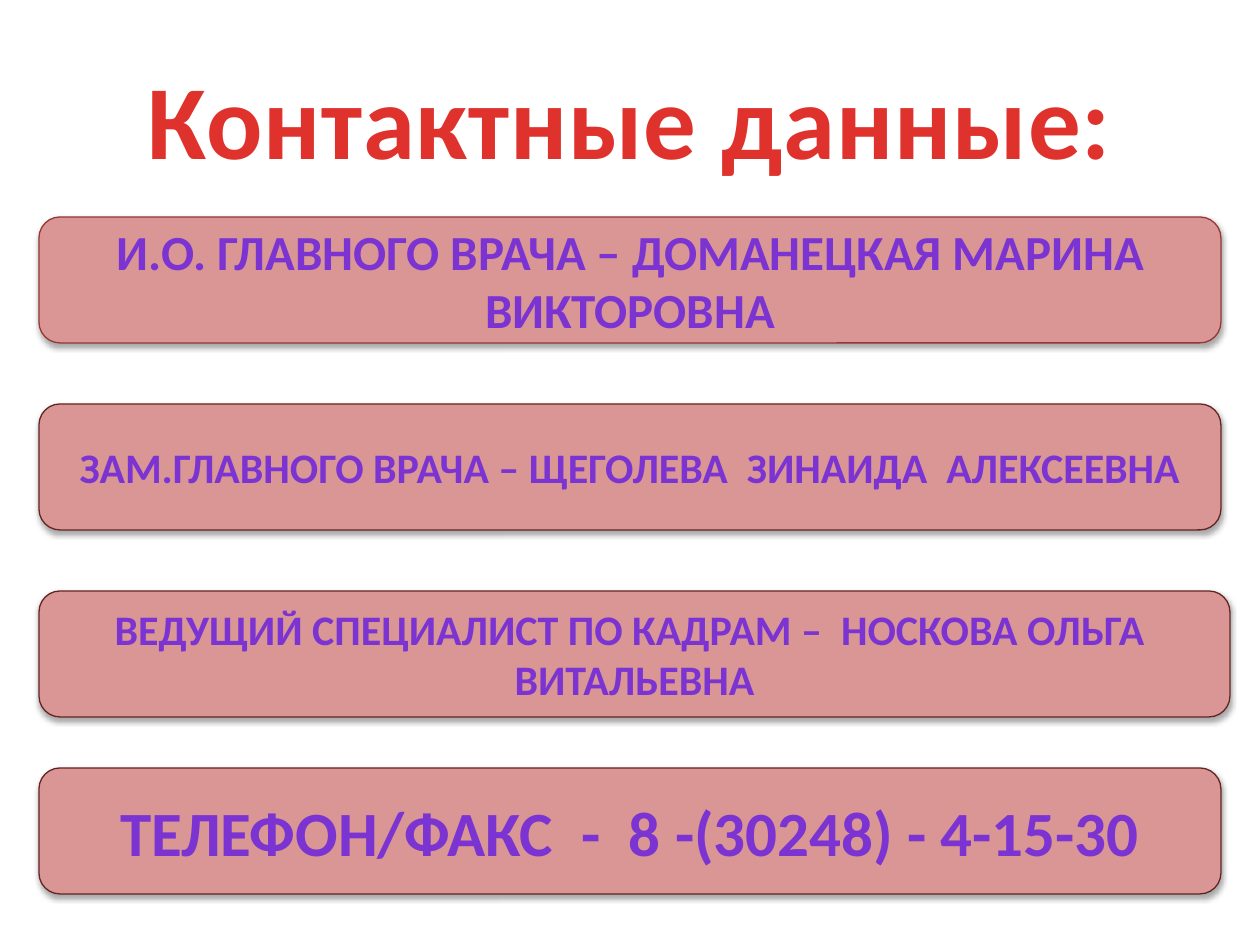
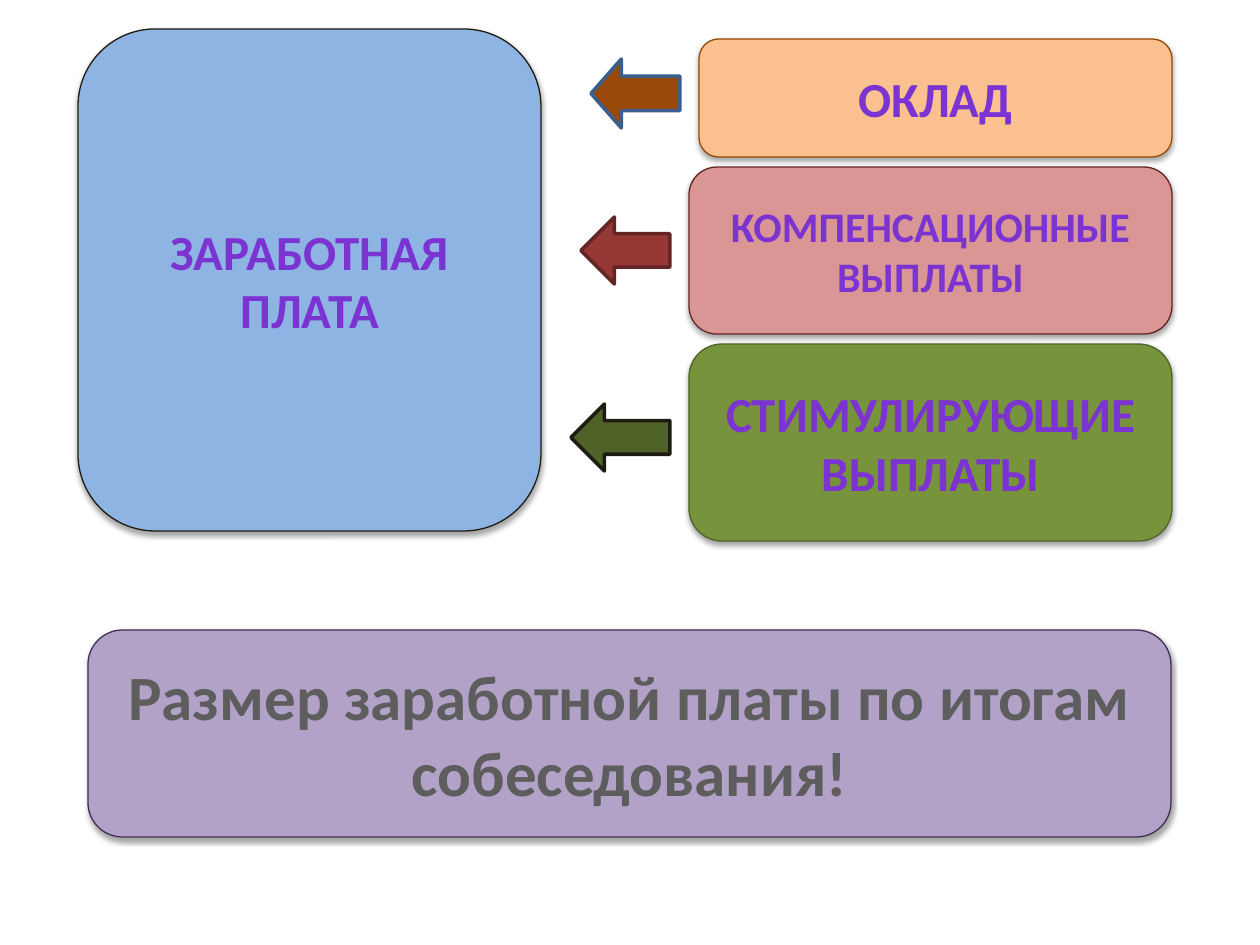
from lxml.etree import SubElement
from pptx import Presentation
from pptx.dml.color import RGBColor
from pptx.enum.shapes import MSO_SHAPE
from pptx.enum.text import MSO_ANCHOR, PP_ALIGN
from pptx.oxml.ns import qn
from pptx.util import Pt

# Scale and style
SCALE = 914400 / 126
FONT = "Calibri"
RED = RGBColor(0xE0, 0x32, 0x2D)
VIOLET = RGBColor(0x7B, 0x34, 0xD2)
GREY = RGBColor(0x5D, 0x5D, 0x5D)
ROSE = RGBColor(0xD9, 0x96, 0x94)
BRICK = RGBColor(0x95, 0x37, 0x35)
MAROON = RGBColor(0x63, 0x25, 0x23)
SKY = RGBColor(0x8E, 0xB4, 0xE3)
BLUE = RGBColor(0x3A, 0x5F, 0x8C)
PEACH = RGBColor(0xFA, 0xC0, 0x90)
BROWN = RGBColor(0x98, 0x48, 0x07)
GREEN = RGBColor(0x77, 0x93, 0x3C)
MOSS = RGBColor(0x4F, 0x62, 0x28)
LILAC = RGBColor(0xB3, 0xA2, 0xC7)
PLUM = RGBColor(0x40, 0x31, 0x52)
INK = RGBColor(0x1E, 0x1C, 0x11)


def px(size):
    return round(size * SCALE)


def write(shape, text, size=28, color=VIOLET, space=0):
    """Put bold centred text into a shape; space is in hundredths of a point."""
    frame = shape.text_frame
    frame.word_wrap = True
    frame.vertical_anchor = MSO_ANCHOR.MIDDLE
    para = frame.paragraphs[0]
    para.alignment = PP_ALIGN.CENTER
    run = para.add_run()
    run.text = text
    font = run.font
    font.name, font.size, font.bold = FONT, Pt(size), True
    font.color.rgb = color
    if space:
        font._element.set("spc", str(space))


class Deck:
    def __init__(self):
        self.prs = Presentation()
        self.prs.slide_width, self.prs.slide_height = px(1260), px(945)
        self.slide = None

    def page(self):
        self.slide = self.prs.slides.add_slide(self.prs.slide_layouts[6])

    def title(self, text):
        box = self.slide.shapes.add_textbox(*map(px, (63, 38, 1134, 158)))
        write(box, text, size=60, color=RED, space=50)

    def shape(self, kind, place, fill, line, width):
        shape = self.slide.shapes.add_shape(kind, *map(px, place))
        shape.shadow.inherit = False
        shape.fill.solid()
        shape.fill.fore_color.rgb = fill
        shape.line.color.rgb = line
        shape.line.width = Pt(width)
        return shape

    def card(self, text, place, fill, line, **style):
        card = self.shape(MSO_SHAPE.ROUNDED_RECTANGLE, place, fill, line, 0.75)
        write(card, text, **style)
        # Soft shadow below the card
        effect = card._element.spPr.find(qn("a:effectLst"))
        shade = SubElement(effect, qn("a:outerShdw"), blurRad="40000",
                           dist="23000", dir="5400000", rotWithShape="0")
        black = SubElement(shade, qn("a:srgbClr"), val="000000")
        SubElement(black, qn("a:alpha"), val="35000")

    def arrow(self, place, fill, line, head=0.5):
        arrow = self.shape(MSO_SHAPE.LEFT_ARROW, place, fill, line, 2)
        arrow.adjustments[1] = head


def contacts(deck):
    deck.page()
    deck.title("Контактные данные:")
    rows = [
        ("И.О. ГЛАВНОГО ВРАЧА – ДОМАНЕЦКАЯ МАРИНА ВИКТОРОВНА",
         217, 1182, BRICK, 28),
        ("ЗАМ.ГЛАВНОГО ВРАЧА – ЩЕГОЛЕВА  ЗИНАИДА  АЛЕКСЕЕВНА",
         404, 1182, MAROON, 24),
        ("ВЕДУЩИЙ СПЕЦИАЛИСТ ПО КАДРАМ –  НОСКОВА ОЛЬГА  ВИТАЛЬЕВНА",
         591, 1191, MAROON, 24),
        ("ТЕЛЕФОН/ФАКС  -  8 -(30248) - 4-15-30",
         768, 1182, MAROON, 36),
    ]
    for text, top, width, line, size in rows:
        deck.card(text, (39, top, width, 126), ROSE, line, size=size)


def salary(deck):
    deck.page()
    deck.card("ЗАРАБОТНАЯ ПЛАТА", (78, 29, 463, 502), SKY, INK)

    # Parts of the pay
    deck.card("ОКЛАД", (699, 39, 473, 118), PEACH, BROWN)
    deck.card("КОМПЕНСАЦИОННЫЕ ВЫПЛАТЫ", (689, 167, 483, 167),
              ROSE, MAROON, size=24)
    deck.card("СТИМУЛИРУЮЩИЕ ВЫПЛАТЫ", (689, 344, 483, 197), GREEN, MOSS)

    # Arrows from the parts to the pay
    deck.arrow((581, 217, 89, 67), BRICK, MAROON)
    deck.arrow((571, 404, 99, 67), MOSS, INK)
    deck.arrow((591, 59, 89, 69), BROWN, BLUE, head=0.44)

    # Closing note
    deck.card("Размер заработной платы по итогам собеседования!",
              (88, 630, 1083, 207), LILAC, PLUM, size=36, color=GREY)


def main():
    deck = Deck()
    contacts(deck)
    salary(deck)
    deck.prs.save("out.pptx")


if __name__ == "__main__":
    main()
